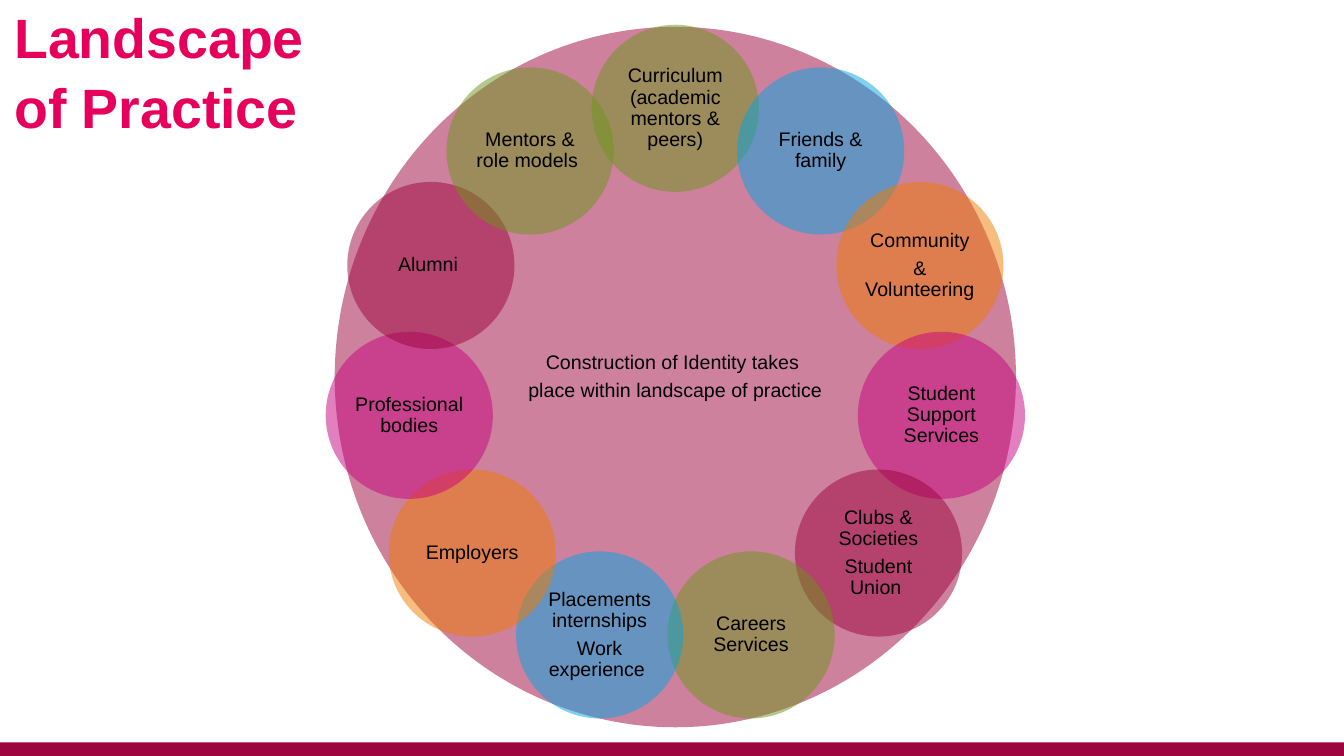
import math
from dataclasses import dataclass

import pptx
import pptx.dml.color
import pptx.enum.shapes
import pptx.enum.text
import pptx.oxml
import pptx.oxml.ns
import pptx.util

COLUMNS = 160
FONT = "Arial"
CRIMSON, GREEN, BLUE = "9D043D", "6D951A", "00A6E1"
ORANGE, MAGENTA = "F07C00", "C7007F"

prs = pptx.Presentation()
prs.slide_width = pptx.util.Inches(13.33)
prs.slide_height = pptx.util.Inches(7.5)


@dataclass
class Circle:
    color: str
    paragraphs: list[str]


# The circles run clockwise from the top
CIRCLES = [
    Circle(GREEN, ["Curriculum (academic mentors & peers)"]),
    Circle(BLUE, ["Friends & family"]),
    Circle(ORANGE, ["Community", "& Volunteering "]),
    Circle(MAGENTA, ["Student Support Services"]),
    Circle(CRIMSON, ["Clubs & Societies", "Student Union "]),
    Circle(GREEN, ["Careers Services"]),
    Circle(BLUE, ["Placements internships", "Work experience "]),
    Circle(ORANGE, ["Employers"]),
    Circle(MAGENTA, ["Professional bodies"]),
    Circle(CRIMSON, ["Alumni "]),
    Circle(GREEN, ["Mentors & role models "]),
]
LANDSCAPE = Circle(CRIMSON, ["Construction of Identity takes ",
                             "place within landscape of practice"])


def grid(cells: float) -> int:
    """Length of a number of square grid cells."""
    return round(prs.slide_width * cells / COLUMNS)


def rgb(color: str) -> pptx.dml.color.RGBColor:
    return pptx.dml.color.RGBColor.from_string(color)


def add_run(p, text: str, size: float, color: str, bold: bool = False) -> None:
    r = p.add_run()
    r.text = text
    r.font.name = FONT
    r.font.size = pptx.util.Pt(size)
    r.font.bold = bold
    r.font.color.rgb = rgb(color)


def add_filled(slide, kind, left: float, top: float, width: float,
               height: float, color: str):
    sp = slide.shapes.add_shape(kind, grid(left), grid(top),
                                grid(width), grid(height))
    sp.shadow.inherit = False
    sp.fill.solid()
    sp.fill.fore_color.rgb = rgb(color)
    sp.line.fill.background()
    return sp


def add_circle(slide, circle: Circle, x: float, y: float,
               width: float, height: float) -> None:
    """Half-transparent ellipse centred on x, y, with its text."""
    sp = add_filled(slide, pptx.enum.shapes.MSO_SHAPE.OVAL,
                    x - width / 2, y - height / 2, width, height, circle.color)
    clr = sp.fill._xPr.find(".//" + pptx.oxml.ns.qn("a:srgbClr"))
    clr.append(pptx.oxml.parse_xml(
        f'<a:alpha {pptx.oxml.ns.nsdecls("a")} val="50000"/>'))

    tf = sp.text_frame
    tf.word_wrap = True
    tf.vertical_anchor = pptx.enum.text.MSO_ANCHOR.MIDDLE
    inset = pptx.util.Inches(0.02)
    tf.margin_left = tf.margin_right = tf.margin_top = tf.margin_bottom = inset
    for i, text in enumerate(circle.paragraphs):
        p = tf.add_paragraph() if i else tf.paragraphs[0]
        p.alignment = pptx.enum.text.PP_ALIGN.CENTER
        p.line_spacing = 0.9
        p.space_after = pptx.util.Pt(4.9)
        add_run(p, text, 14, "000000")


def add_title(slide, text: str) -> None:
    sp = slide.shapes.title
    sp.left, sp.top, sp.width, sp.height = map(grid, (1.7, 1.7, 41.9, 13.2))
    tf = sp.text_frame
    tf.word_wrap = True
    tf.auto_size = pptx.enum.text.MSO_AUTO_SIZE.NONE
    tf.vertical_anchor = pptx.enum.text.MSO_ANCHOR.MIDDLE
    tf.margin_left = 0
    p = tf.paragraphs[0]
    p.alignment = pptx.enum.text.PP_ALIGN.LEFT
    p.line_spacing = 1.05
    add_run(p, text, 39.6, "E6005B", bold=True)


def main() -> None:
    slide = prs.slides.add_slide(prs.slide_layouts.get_by_name("Title Only"))

    # Bottom band
    add_filled(slide, pptx.enum.shapes.MSO_SHAPE.RECTANGLE,
               0, 88.4, COLUMNS, 1.6, "9E043D")

    # Landscape with its ring of circles
    x, y, radius, diameter = 80.4, 44.9, 32, 19.9
    add_circle(slide, LANDSCAPE, x, y, 81.1, 83.4)
    for i, circle in enumerate(CIRCLES):
        angle = math.tau * i / len(CIRCLES)
        add_circle(slide, circle, x + radius * math.sin(angle),
                   y - radius * math.cos(angle), diameter, diameter)

    add_title(slide, "Landscape of Practice")
    prs.save("out.pptx")


if __name__ == "__main__":
    main()
